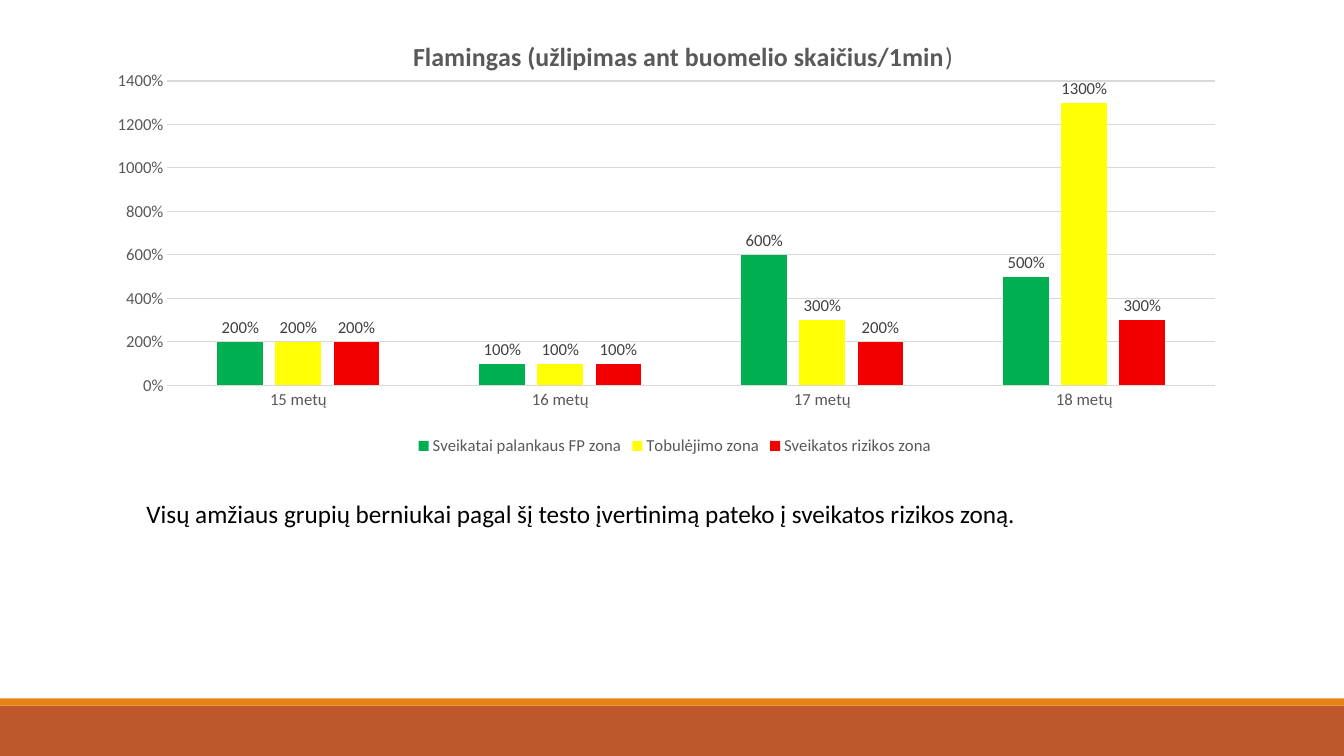
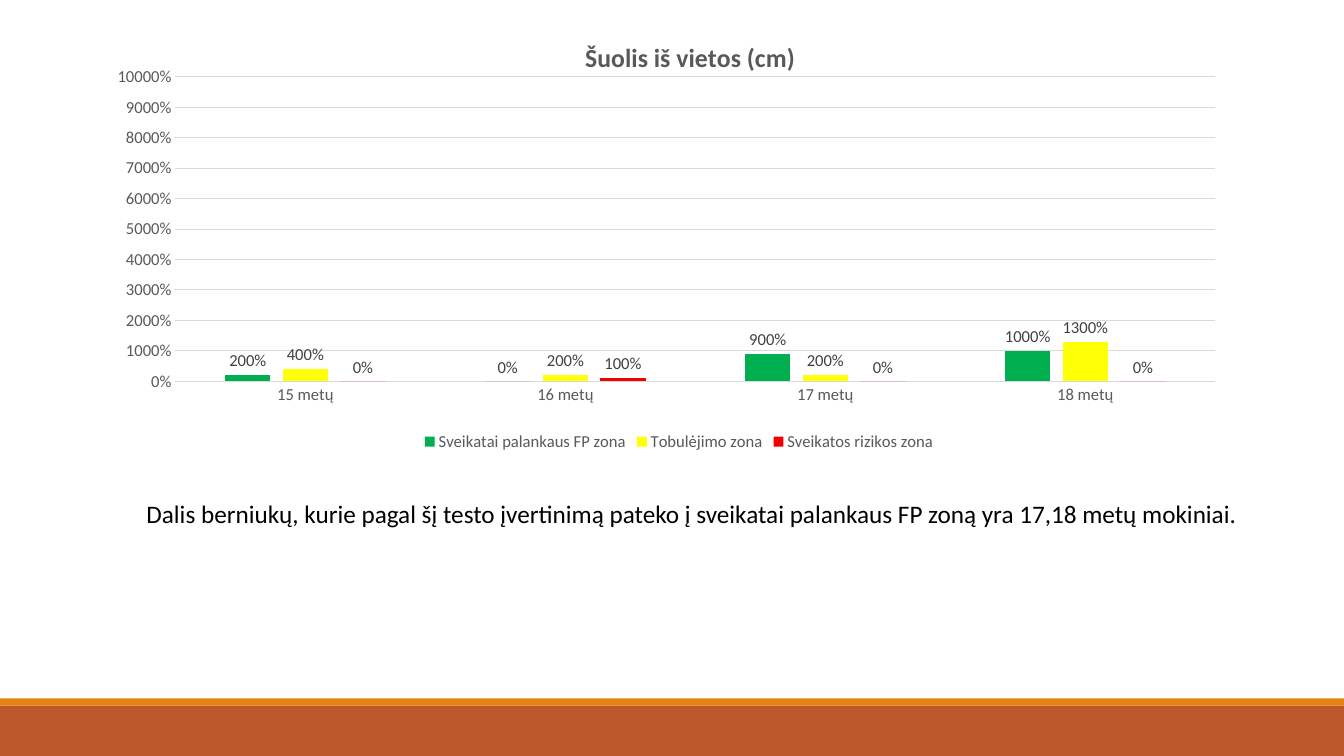
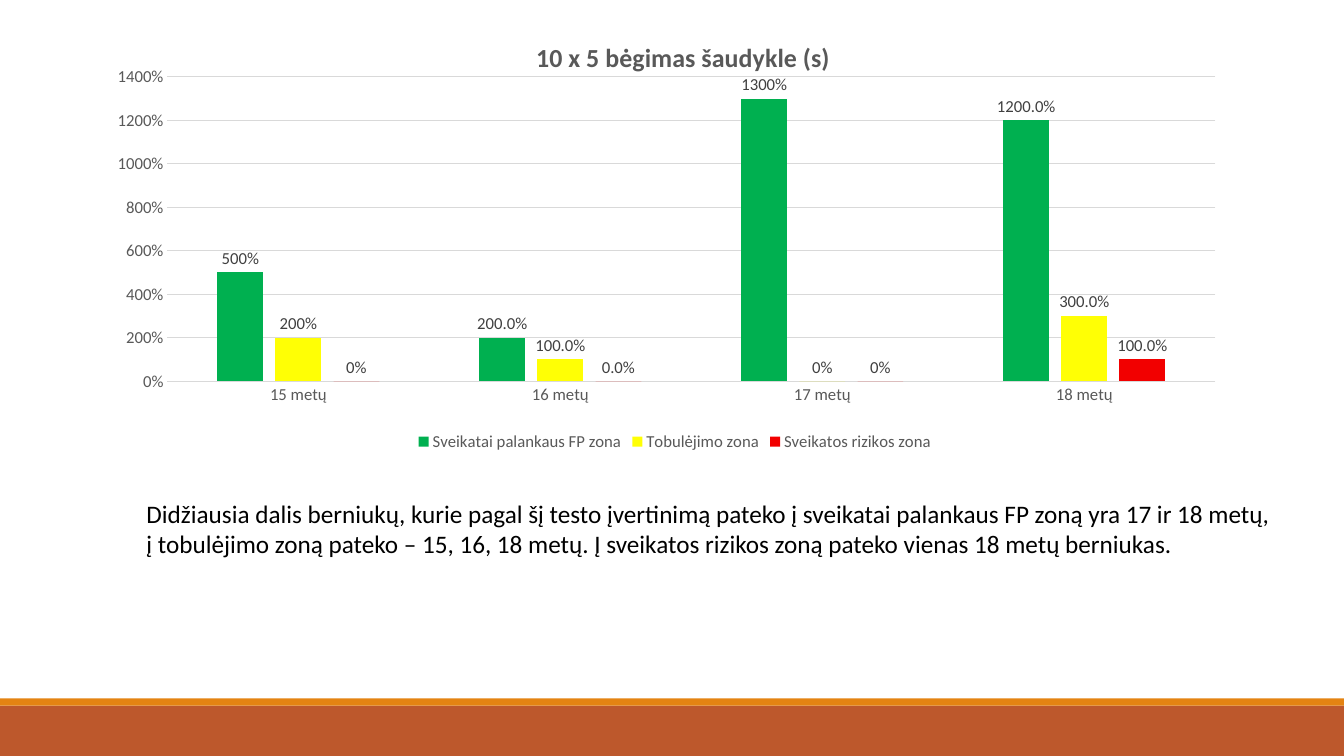
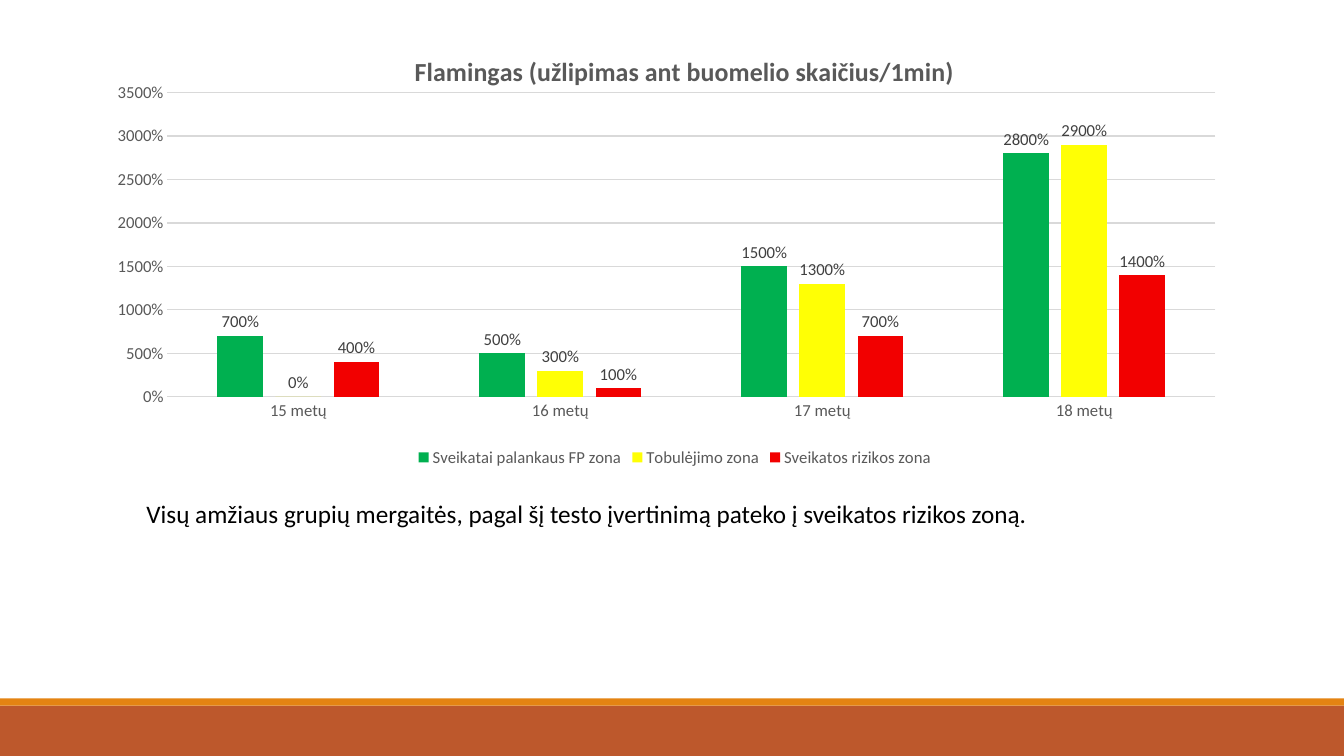
from pptx import Presentation
from pptx.chart.data import CategoryChartData
from pptx.dml.color import RGBColor
from pptx.enum.chart import XL_CHART_TYPE, XL_LABEL_POSITION, XL_LEGEND_POSITION, XL_TICK_MARK
from pptx.enum.shapes import MSO_SHAPE
from pptx.enum.text import MSO_AUTO_SIZE
from pptx.oxml import parse_xml
from pptx.oxml.ns import nsdecls
from pptx.util import Pt

COLUMNS = XL_CHART_TYPE.COLUMN_CLUSTERED
OUTSIDE = XL_LABEL_POSITION.OUTSIDE_END
BOTTOM = XL_LEGEND_POSITION.BOTTOM
NO_TICK = XL_TICK_MARK.NONE
RECTANGLE = MSO_SHAPE.RECTANGLE
GROW = MSO_AUTO_SIZE.SHAPE_TO_FIT_TEXT

PX = 9525
FONT = "Calibri"
WIDTH, HEIGHT = 1280, 720
BANDS = [(672, 48, "BD582C"), (665, 7, "E48312")]
CHART_LEFT, CHART_WIDTH, CHART_HEIGHT = 112, 1056, 422
TEXT_LEFT, TEXT_TOP, TEXT_WIDTH = 130, 470, 1092
PLOT_BOX = {"x": 0.04, "y": 0.145, "w": 0.95, "h": 0.687}
GREY, LABEL_GREY, LINE_GREY, BLACK = "595959", "404040", "D9D9D9", "000000"

AGES = ["15 metų", "16 metų", "17 metų", "18 metų"]
ZONES = [
    ("Sveikatai palankaus FP zona", "00B050"),
    ("Tobulėjimo zona", "FFFF05"),
    ("Sveikatos rizikos zona", "F20000"),
]
SLIDES = [
    {
        "title": [("Flamingas (užlipimas ant buomelio skaičius/1min", True), (")", False)],
        "title_at": (0.26, 0.045),
        "chart_top": 16,
        "values": [(2, 1, 6, 5), (2, 1, 3, 13), (2, 1, 2, 3)],
        "text": "Visų amžiaus grupių berniukai pagal šį testo įvertinimą pateko į sveikatos rizikos zoną.",
        "text_height": 68,
    },
    {
        "title": [("Šuolis iš vietos (cm)", True)],
        "title_at": (0.41, 0.05),
        "chart_top": 12,
        "maximum": 100,
        "values": [(2, 0, 9, 10), (4, 2, 2, 13), (0, 1, 0, 0)],
        "text": "Dalis berniukų, kurie pagal šį testo įvertinimą pateko į sveikatai palankaus FP zoną "
                "yra 17,18 metų mokiniai.",
        "text_height": 68,
    },
    {
        "title": [("10 x 5 bėgimas šaudykle (s)", True)],
        "title_at": (0.37, 0.05),
        "chart_top": 12,
        "decimal_points": (1, 3),
        "values": [(5, 2, 13, 12), (2, 1, 0, 3), (0, 0, 0, 1)],
        "text": "Didžiausia dalis berniukų, kurie pagal šį testo įvertinimą pateko į sveikatai palankaus "
                "FP zoną yra 17 ir 18 metų, į tobulėjimo zoną pateko – 15, 16, 18 metų. "
                "Į sveikatos rizikos zoną pateko vienas 18 metų berniukas.",
        "text_height": 97,
    },
    {
        "title": [("Flamingas (užlipimas ant buomelio skaičius/1min)", True)],
        "title_at": (0.26, 0.045),
        "chart_top": 27,
        "values": [(7, 5, 15, 28), (0, 3, 13, 29), (4, 1, 7, 14)],
        "text": "Visų amžiaus grupių mergaitės, pagal šį testo įvertinimą pateko į sveikatos rizikos zoną.",
        "text_height": 38,
    },
]


def color(value):
    return RGBColor.from_string(value)


def box(*lengths):
    return [length * PX for length in lengths]


def style_font(font, size, value, bold=False):
    font.name = FONT
    font.size = Pt(size)
    font.bold = bold
    font.color.rgb = color(value)


def style_line(line):
    line.color.rgb = color(LINE_GREY)
    line.width = Pt(0.75)


def manual_layout(target="", **fractions):
    modes = "".join(f'<c:{key}Mode val="edge"/>' for key in "xy")
    sizes = "".join(f'<c:{key} val="{value}"/>' for key, value in fractions.items())
    return parse_xml(f"<c:layout {nsdecls('c')}><c:manualLayout>{target}{modes}{sizes}"
                     "</c:manualLayout></c:layout>")


def add_bands(slide, master):
    for top, height, fill in BANDS:
        band = slide.shapes.add_shape(RECTANGLE, *box(0, top, WIDTH, height))
        band.shadow.inherit = False
        band.fill.solid()
        band.fill.fore_color.rgb = color(fill)
        band.line.fill.background()
        master.shapes.element.append(band.element)


def add_title(chart, runs, position):
    chart.has_title = True
    title = chart.chart_title
    paragraph = title.text_frame.paragraphs[0]
    for text, bold in runs:
        run = paragraph.add_run()
        run.text = text
        style_font(run.font, 18.6, GREY, bold)
    title.include_in_layout = False
    element = title.element if hasattr(title, "element") else title._element
    for layout in element.findall("{*}layout"):
        element.remove(layout)
    x, y = position
    element.find("{*}tx").addnext(manual_layout(x=x, y=y))


def style_series(series, fill, decimal_points):
    series.format.fill.solid()
    series.format.fill.fore_color.rgb = color(fill)
    labels = series.data_labels
    labels.show_value = True
    labels.number_format = "0%"
    labels.number_format_is_linked = False
    labels.position = OUTSIDE
    style_font(labels.font, 12, LABEL_GREY)
    for index in decimal_points:
        label = series.points[index].data_label
        style_font(label.font, 12, LABEL_GREY)
        label.position = OUTSIDE
        number_format = parse_xml(f"<c:numFmt {nsdecls('c')} formatCode=\"0.0%\" sourceLinked=\"0\"/>")
        entry = labels._element.find(f"{{*}}dLbl[{{*}}idx][last()]")
        entry.find("{*}idx").addnext(number_format)


def style_axes(chart, maximum):
    for axis in (chart.category_axis, chart.value_axis):
        axis.major_tick_mark = NO_TICK
        axis.minor_tick_mark = NO_TICK
        style_font(axis.tick_labels.font, 12, GREY)
    style_line(chart.category_axis.format.line)
    chart.category_axis.has_major_gridlines = False
    value_axis = chart.value_axis
    value_axis.format.line.fill.background()
    value_axis.minimum_scale = 0
    value_axis.maximum_scale = maximum
    value_axis.tick_labels.number_format = "0%"
    value_axis.tick_labels.number_format_is_linked = False
    value_axis.has_major_gridlines = True
    style_line(value_axis.major_gridlines.format.line)


def add_chart(slide, content):
    data = CategoryChartData(number_format="0%")
    data.categories = AGES
    for (name, _), values in zip(ZONES, content["values"]):
        data.add_series(name, values)
    frame = box(CHART_LEFT, content["chart_top"], CHART_WIDTH, CHART_HEIGHT)
    chart = slide.shapes.add_chart(COLUMNS, *frame, data).chart
    style_font(chart.font, 10, BLACK)
    add_title(chart, content["title"], content["title_at"])
    style_axes(chart, content.get("maximum"))
    chart.has_legend = True
    chart.legend.position = BOTTOM
    chart.legend.include_in_layout = False
    style_font(chart.legend.font, 12, GREY)
    plot = chart.plots[0]
    plot.vary_by_categories = False
    plot.gap_width = 219
    plot.overlap = -27
    for series, (_, fill) in zip(plot.series, ZONES):
        style_series(series, fill, content.get("decimal_points", ()))
    plot_area = chart.element.find(".//{*}plotArea") if hasattr(chart, "element") \
        else chart._chartSpace.find(".//{*}plotArea")
    for layout in plot_area.findall("{*}layout"):
        plot_area.remove(layout)
    plot_area.insert(0, manual_layout('<c:layoutTarget val="inner"/>', **PLOT_BOX))


def add_conclusion(slide, text, height):
    frame = slide.shapes.add_textbox(*box(TEXT_LEFT, TEXT_TOP, TEXT_WIDTH, height)).text_frame
    frame.word_wrap = True
    frame.auto_size = GROW
    run = frame.paragraphs[0].add_run()
    run.text = text
    style_font(run.font, 18, BLACK)


def main():
    presentation = Presentation()
    presentation.slide_width, presentation.slide_height = box(WIDTH, HEIGHT)
    blank = presentation.slide_layouts[6]
    for number, content in enumerate(SLIDES):
        slide = presentation.slides.add_slide(blank)
        if number == 0:
            add_bands(slide, presentation.slide_master)
        add_chart(slide, content)
        add_conclusion(slide, content["text"], content["text_height"])
    presentation.save("out.pptx")


if __name__ == "__main__":
    main()
